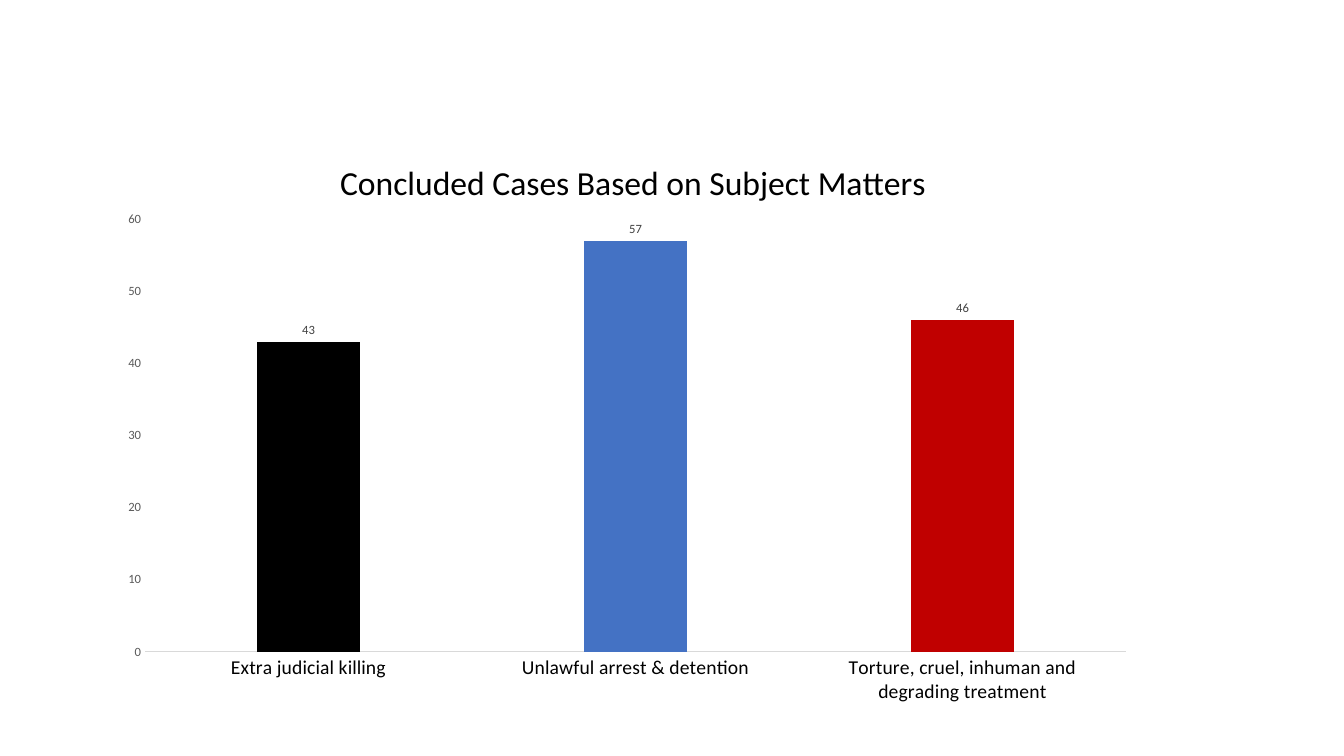
"""Build a slide with a column chart of concluded cases by subject matter."""
from lxml import etree
from pptx import Presentation
from pptx import util as u
from pptx.chart import data as chart_data
from pptx.dml import color
from pptx.enum import chart as kinds
from pptx.oxml import ns

TITLE = "Concluded Cases Based on Subject Matters"
CASES = [
    ("Extra judicial killing", 43, "black"),
    ("Unlawful arrest & detention", 57, "blue"),
    ("Torture, cruel, inhuman and degrading treatment", 46, "red"),
]
COLOURS = {
    "black": "000000",
    "blue": "4472C4",
    "red": "C00000",
    "label": "404040",
    "scale": "595959",
    "rule": "D9D9D9",
}
FONT = "Calibri"
SLIDE_SIZE = (960, 540)
CHART_BOX = (76.3, 94.3, 742.3, 416.9)
TITLE_PLACE = {"x": 162.3, "y": 15.7}
PLOT_PLACE = {"x": 27.3, "y": 62.1, "w": 700.7, "h": 309.3}


def rgb(name):
    return color.RGBColor.from_string(COLOURS[name])


def style_font(font, size, name):
    font.name = FONT
    font.size = u.Pt(size)
    font.bold = False
    font.color.rgb = rgb(name)


def place(element, index, lengths, inner=False):
    for old in element.findall(ns.qn("c:layout")):
        element.remove(old)
    layout = etree.Element(ns.qn("c:layout"))
    manual = etree.SubElement(layout, ns.qn("c:manualLayout"))
    settings = [("layoutTarget", "inner")] if inner else []
    settings += [("xMode", "edge"), ("yMode", "edge")]
    for key, length in lengths.items():
        whole = CHART_BOX[2] if key in "xw" else CHART_BOX[3]
        settings.append((key, f"{length / whole:.4f}"))
    for tag, value in settings:
        etree.SubElement(manual, ns.qn(f"c:{tag}")).set("val", value)
    element.insert(index, layout)


def add_title(chart):
    chart.has_title = True
    frame = chart.chart_title.text_frame
    frame.text = TITLE
    style_font(frame.paragraphs[0].runs[0].font, 24, "black")
    chart.chart_title.include_in_layout = False
    place(chart.chart_title._element, 1, TITLE_PLACE)


def style_axes(chart):
    for axis, size, name in ((chart.category_axis, 14, "black"), (chart.value_axis, 9, "scale")):
        axis.has_major_gridlines = False
        axis.major_tick_mark = axis.minor_tick_mark = kinds.XL_TICK_MARK.NONE
        style_font(axis.tick_labels.font, size, name)
    rule = chart.category_axis.format.line
    rule.color.rgb = rgb("rule")
    rule.width = u.Pt(0.75)
    scale = chart.value_axis
    scale.format.line.fill.background()
    scale.minimum_scale, scale.maximum_scale, scale.major_unit = 0, 60, 10


def style_columns(chart):
    plot = chart.plots[0]
    plot.gap_width, plot.overlap = 219, -27
    plot.vary_by_categories = False
    series = plot.series[0]
    series.format.fill.solid()
    series.format.fill.fore_color.rgb = rgb("blue")
    for index, (_, _, name) in enumerate(CASES):
        fill = series.points[index].format.fill
        fill.solid()
        fill.fore_color.rgb = rgb(name)
    labels = series.data_labels
    labels.show_value = True
    labels.position = kinds.XL_LABEL_POSITION.OUTSIDE_END
    style_font(labels.font, 9, "label")


def main():
    deck = Presentation()
    deck.slide_width, deck.slide_height = map(u.Pt, SLIDE_SIZE)
    page = deck.slides.add_slide(deck.slide_layouts[6])
    table = chart_data.CategoryChartData()
    table.categories = [subject for subject, _, _ in CASES]
    table.add_series("Series 1", [count for _, count, _ in CASES])
    chart = page.shapes.add_chart(
        kinds.XL_CHART_TYPE.COLUMN_CLUSTERED, *map(u.Pt, CHART_BOX), table
    ).chart
    style_font(chart.font, 10, "black")
    chart.has_legend = False
    add_title(chart)
    style_axes(chart)
    style_columns(chart)
    place(chart._chartSpace.find(".//" + ns.qn("c:plotArea")), 0, PLOT_PLACE, inner=True)
    deck.save("out.pptx")


if __name__ == "__main__":
    main()
